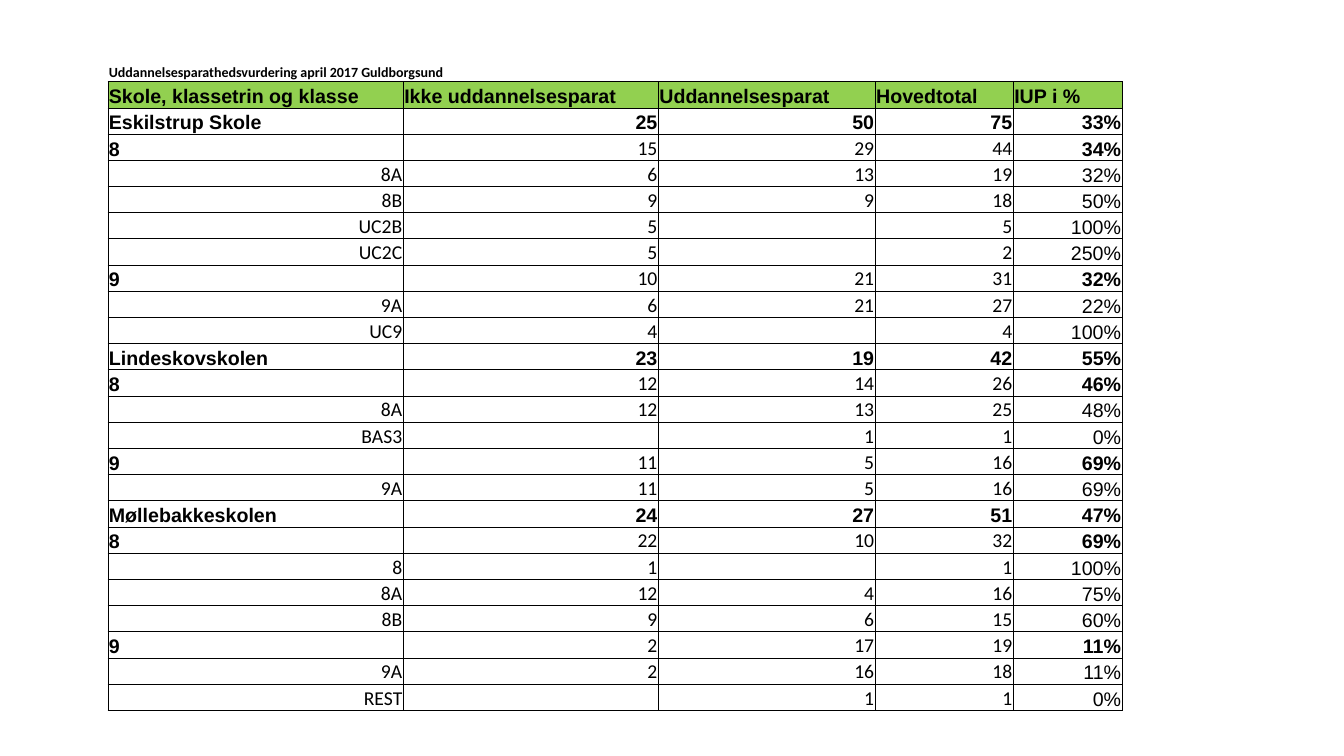
from lxml import etree
from pptx import Presentation
from pptx.dml.color import RGBColor
from pptx.enum.text import MSO_ANCHOR, PP_ALIGN
from pptx.oxml.ns import qn
from pptx.util import Pt

LEFT, RIGHT = PP_ALIGN.LEFT, PP_ALIGN.RIGHT
BOTTOM = MSO_ANCHOR.BOTTOM
PX = 9144  # EMU, 100 px to the inch
COLORS = {"text": "000000", "border": "000000", "header": "92D050"}
HEADING_FONT, BODY_FONT = "Arial", "Calibri"
BORDER_WIDTH = Pt(0.5)

TITLE = "Uddannelsesparathedsvurdering april 2017 Guldborgsund"
HEADERS = ["Skole, klassetrin og klasse", "Ikke uddannelsesparat",
           "Uddannelsesparat", "Hovedtotal", "IUP i %"]
COLUMN_WIDTHS = [293, 253, 215, 137, 108]
ROW_HEIGHT = 26
SCHOOL, GRADE, CLASS = range(3)
# level, name, not ready, ready, total
RESULTS = [
    (SCHOOL, "Eskilstrup Skole", 25, 50, 75),
    (GRADE, "8", 15, 29, 44),
    (CLASS, "8A", 6, 13, 19),
    (CLASS, "8B", 9, 9, 18),
    (CLASS, "UC2B", 5, None, 5),
    (CLASS, "UC2C", 5, None, 2),
    (GRADE, "9", 10, 21, 31),
    (CLASS, "9A", 6, 21, 27),
    (CLASS, "UC9", 4, None, 4),
    (SCHOOL, "Lindeskovskolen", 23, 19, 42),
    (GRADE, "8", 12, 14, 26),
    (CLASS, "8A", 12, 13, 25),
    (CLASS, "BAS3", None, 1, 1),
    (GRADE, "9", 11, 5, 16),
    (CLASS, "9A", 11, 5, 16),
    (SCHOOL, "Møllebakkeskolen", 24, 27, 51),
    (GRADE, "8", 22, 10, 32),
    (CLASS, "8", 1, None, 1),
    (CLASS, "8A", 12, 4, 16),
    (CLASS, "8B", 9, 6, 15),
    (GRADE, "9", 2, 17, 19),
    (CLASS, "9A", 2, 16, 18),
    (CLASS, "REST", None, 1, 1),
]


def write(cell, text, font=HEADING_FONT, size=14, bold=False, align=LEFT):
    cell.margin_left = cell.margin_right = cell.margin_top = PX
    cell.margin_bottom = 0
    cell.vertical_anchor = BOTTOM
    paragraph = cell.text_frame.paragraphs[0]
    paragraph.alignment = align
    if not text:
        # An empty cell needs its own size, or its row grows taller
        etree.SubElement(paragraph._p, qn("a:endParaRPr"), sz=str(size * 100))
        return
    run = paragraph.add_run()
    run.text = text
    run.font.name = font
    run.font.size = Pt(size)
    run.font.bold = bold
    run.font.color.rgb = RGBColor.from_string(COLORS["text"])


def frame_cell(cell, sides="LRTB", fill=None):
    """Draw the borders on the given sides and set the fill."""
    properties = cell._tc.get_or_add_tcPr()
    for side in sides:
        line = etree.SubElement(properties, qn(f"a:ln{side}"), w=str(BORDER_WIDTH))
        solid = etree.SubElement(line, qn("a:solidFill"))
        etree.SubElement(solid, qn("a:srgbClr"), val=COLORS["border"])
    if fill:
        cell.fill.solid()
        cell.fill.fore_color.rgb = RGBColor.from_string(COLORS[fill])
    else:
        cell.fill.background()


def fill_title_row(cells):
    for cell, text in zip(cells, [TITLE, "", "", "", ""]):
        write(cell, text, font=BODY_FONT, size=10, bold=True)
        frame_cell(cell, sides="B")
    cells[0].merge(cells[2])


def fill_header_row(cells):
    for cell, text in zip(cells, HEADERS):
        write(cell, text, bold=True)
        frame_cell(cell, fill="header")


def fill_result_row(cells, level, name, not_ready, ready, total):
    name_cell, *count_cells, share_cell = cells
    is_class = level == CLASS
    write(name_cell, name, font=BODY_FONT if is_class else HEADING_FONT,
          bold=not is_class, align=RIGHT if is_class else LEFT)
    for cell, count in zip(count_cells, (not_ready, ready, total)):
        write(cell, "" if count is None else str(count),
              font=HEADING_FONT if level == SCHOOL else BODY_FONT,
              bold=level == SCHOOL, align=RIGHT)
    write(share_cell, f"{(not_ready or 0) / total:.0%}", bold=not is_class, align=RIGHT)
    for cell in cells:
        frame_cell(cell)


def add_results_table(slide, left, top):
    row_count = len(RESULTS) + 2
    table = slide.shapes.add_table(
        row_count, len(HEADERS), left * PX, top * PX,
        sum(COLUMN_WIDTHS) * PX, row_count * ROW_HEIGHT * PX).table
    table.first_row = table.horz_banding = False
    for column, width in zip(table.columns, COLUMN_WIDTHS):
        column.width = width * PX
    title_row, header_row, *result_rows = [list(row.cells) for row in table.rows]
    fill_title_row(title_row)
    fill_header_row(header_row)
    for cells, result in zip(result_rows, RESULTS):
        fill_result_row(cells, *result)


def main():
    presentation = Presentation()
    presentation.slide_width = 1333 * PX
    presentation.slide_height = 750 * PX
    slide = presentation.slides.add_slide(presentation.slide_layouts[6])
    add_results_table(slide, left=107, top=55)
    presentation.save("out.pptx")


if __name__ == "__main__":
    main()
